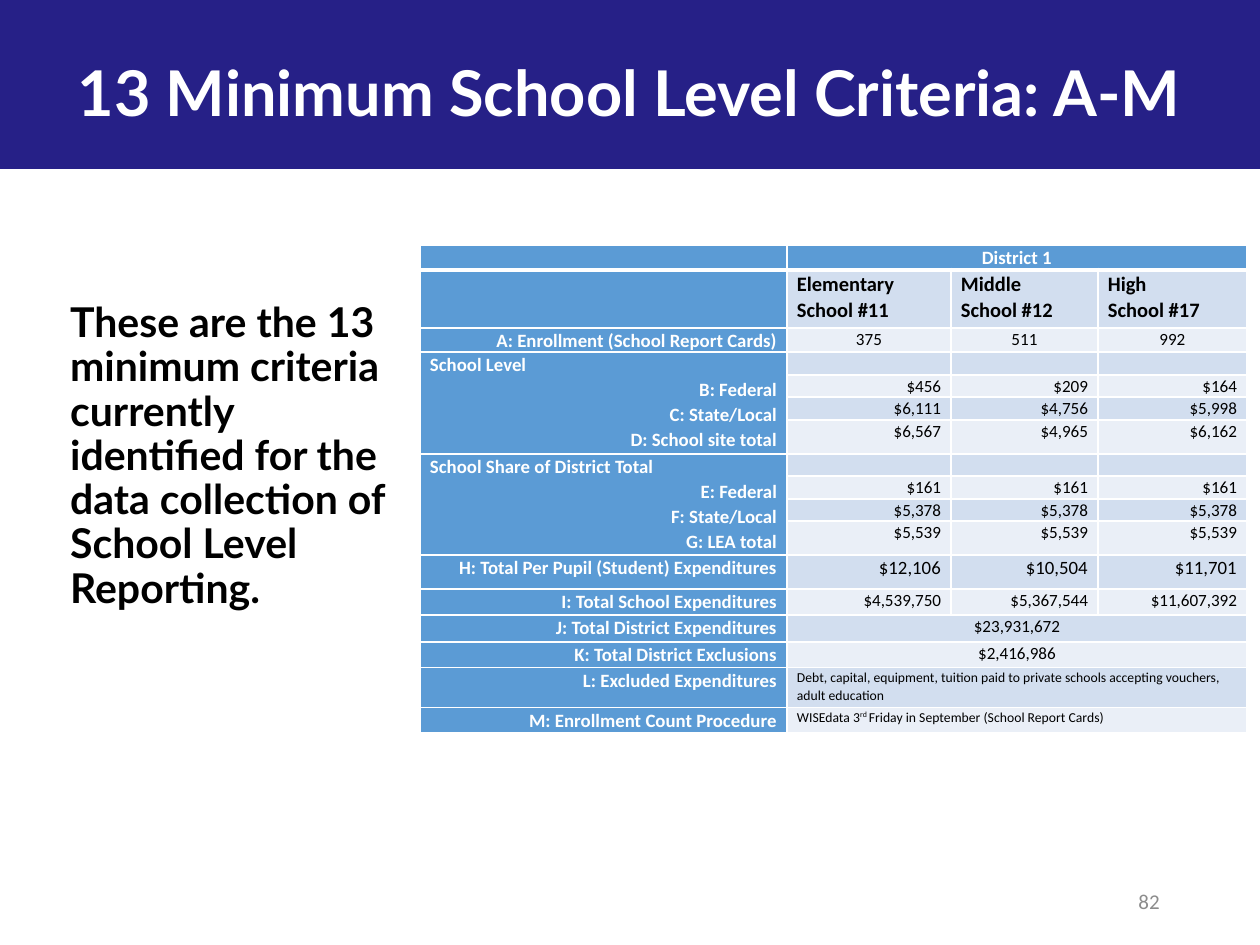
from lxml import etree
from pptx import Presentation
from pptx.dml.color import RGBColor
from pptx.enum.shapes import MSO_SHAPE
from pptx.enum.text import MSO_ANCHOR, PP_ALIGN
from pptx.oxml.ns import qn
from pptx.util import Emu, Pt

LEFT, CENTER, RIGHT = PP_ALIGN.LEFT, PP_ALIGN.CENTER, PP_ALIGN.RIGHT
TOP, MIDDLE = MSO_ANCHOR.TOP, MSO_ANCHOR.MIDDLE
RECTANGLE = MSO_SHAPE.RECTANGLE

PX_PER_INCH = 123
TITLE_ONLY = 5
NAVY, BLUE, PALE, PALER = "262087", "5B9BD5", "D2DEEF", "EAEFF7"
WHITE, BLACK, GRAY = "FFFFFF", "000000", "8C8C8C"

COLUMN_WIDTHS = [367, 164, 147, 149]
SCHOOLS = ["Elementary\nSchool #11", "Middle\nSchool #12", "High\nSchool #17"]
SCHOOL_LEVEL = "School Level\nB: Federal\nC: State/Local\nD: School site total"
DISTRICT_SHARE = "School Share of District Total\nE: Federal\nF: State/Local\nG: LEA total"
EXCLUDED = ("Debt, capital, equipment, tuition paid to private schools "
            "accepting vouchers, adult education")
COUNT_DAY = "WISEdata 3^rd ^Friday in September (School Report Cards)"

HEADING = dict(size=11, color=WHITE, bold=True, align=CENTER)
SCHOOL = dict(size=12, bold=True)
COUNT = dict(size=10, align=CENTER)
AMOUNT = dict(size=10, align=RIGHT)
PER_PUPIL = dict(size=11, align=RIGHT)
NOTE = dict(size=8)

# height, label, values (a single value spans all schools), value format
CRITERIA = [
    (25, "", ["District 1"], HEADING),
    (58, "", SCHOOLS, SCHOOL),
    (24, "A: Enrollment (School Report Cards)", ["375", "511", "992"], COUNT),
    (23, SCHOOL_LEVEL, ["", "", ""], AMOUNT),
    (22, "", ["$456", "$209", "$164"], AMOUNT),
    (23, "", ["$6,111", "$4,756", "$5,998"], AMOUNT),
    (34, "", ["$6,567", "$4,965", "$6,162"], AMOUNT),
    (22, DISTRICT_SHARE, ["", "", ""], AMOUNT),
    (23, "", ["$161"] * 3, AMOUNT),
    (22, "", ["$5,378"] * 3, AMOUNT),
    (34, "", ["$5,539"] * 3, AMOUNT),
    (34, "H: Total Per Pupil (Student) Expenditures", ["$12,106", "$10,504", "$11,701"], PER_PUPIL),
    (26, "I: Total School Expenditures", ["$4,539,750", "$5,367,544", "$11,607,392"], AMOUNT),
    (27, "J: Total District Expenditures", ["$23,931,672"], COUNT),
    (26, "K: Total District Exclusions", ["$2,416,986"], COUNT),
    (40, "L: Excluded Expenditures", [EXCLUDED], NOTE),
    (25, "M: Enrollment Count Procedure", [COUNT_DAY], NOTE),
]


def px(length):
    return Emu(round(length * 914400 / PX_PER_INCH))


def rgb(value):
    return RGBColor.from_string(value)


def write(frame, text, *, size, font="Calibri", color=BLACK, bold=False,
          align=LEFT, first_align=None, spacing=None, anchor=TOP):
    """Fill a text frame, one paragraph a line; text between ^ marks is superscript."""
    frame.word_wrap = True
    frame.vertical_anchor = anchor
    for number, line in enumerate(text.split("\n")):
        paragraph = frame.add_paragraph() if number else frame.paragraphs[0]
        paragraph.alignment = align if number or first_align is None else first_align
        paragraph.line_spacing = spacing
        if not line:
            end = etree.SubElement(paragraph._p, qn("a:endParaRPr"))
            end.set("sz", str(size * 100))
        for part, words in enumerate(line.split("^") if line else []):
            run = paragraph.add_run()
            run.text = words
            run.font.size = Pt(size)
            run.font.name = font
            run.font.bold = bold
            run.font.color.rgb = rgb(color)
            if part % 2:
                run.font._element.set("baseline", "30000")


def add_text(slide, text, left, top, width, height, **text_format):
    box = slide.shapes.add_textbox(px(left), px(top), px(width), px(height))
    write(box.text_frame, text, **text_format)


def add_title(slide, text):
    band = slide.shapes.add_shape(RECTANGLE, px(-1), px(0), px(1261), px(169))
    band.shadow.inherit = False
    band.fill.solid()
    band.fill.fore_color.rgb = rgb(NAVY)
    band.line.fill.background()
    title = slide.shapes.title
    title.left, title.top, title.width, title.height = px(43), px(0), px(1173), px(182)
    write(title.text_frame, text, size=36.9, font="Lato", color=WHITE,
          bold=True, align=CENTER, anchor=MIDDLE)
    title._element.addprevious(band._element)


def add_borders(cell, **widths):
    """Draw white cell borders; widths are points for L, R, T and B."""
    properties = cell._tc.get_or_add_tcPr()
    for side in "LRTB":
        line = etree.SubElement(properties, qn(f"a:ln{side}"), w=str(Pt(widths.get(side, 1))))
        fill = etree.SubElement(line, qn("a:solidFill"))
        etree.SubElement(fill, qn("a:srgbClr"), val=WHITE)


def format_cell(cell, text, fill, borders, **text_format):
    add_borders(cell, **borders)
    cell.fill.solid()
    cell.fill.fore_color.rgb = rgb(fill)
    cell.margin_left = cell.margin_right = px(10)
    cell.margin_top = cell.margin_bottom = 0
    write(cell.text_frame, text, spacing=1.07, **text_format)


def add_criteria_table(slide, left, top):
    heights = [height for height, *_ in CRITERIA]
    table = slide.shapes.add_table(len(heights), len(COLUMN_WIDTHS), px(left), px(top),
                                   px(sum(COLUMN_WIDTHS)), px(sum(heights))).table
    table.first_row = table.horz_banding = False
    for column, width in zip(table.columns, COLUMN_WIDTHS):
        column.width = px(width)
    for index, (height, label, values, value_format) in enumerate(CRITERIA):
        table.rows[index].height = px(height)
        borders = {0: {"B": 3}, 1: {"T": 3}}.get(index, {})
        is_group = "\n" in label
        format_cell(table.cell(index, 0), label, BLUE, borders, size=11, color=WHITE,
                    bold=True, align=RIGHT, first_align=LEFT if is_group else RIGHT)
        value_fill = BLUE if index == 0 else PALE if index % 2 else PALER
        spans_schools = len(values) == 1
        shown = values + ["", ""] if spans_schools else values
        for column, value in enumerate(shown, start=1):
            format_cell(table.cell(index, column), value, value_fill, borders, **value_format)
        if spans_schools:
            table.cell(index, 1).merge(table.cell(index, 3))
        if is_group:
            table.cell(index, 0).merge(table.cell(index + label.count("\n"), 0))


def main():
    deck = Presentation()
    deck.slide_width, deck.slide_height = px(1260), px(945)
    slide = deck.slides.add_slide(deck.slide_layouts[TITLE_ONLY])
    add_title(slide, "13 Minimum School Level Criteria: A-M")
    add_text(slide, "These are the 13 minimum criteria currently identified for "
             "the data collection of School Level Reporting.",
             58, 296, 352, 364, size=24, font="Lato", bold=True, spacing=0.9)
    add_criteria_table(slide, 420, 245)
    add_text(slide, "82", 889, 876, 283, 50, size=12.3, color=GRAY,
             align=RIGHT, anchor=MIDDLE)
    deck.save("out.pptx")


if __name__ == "__main__":
    main()
